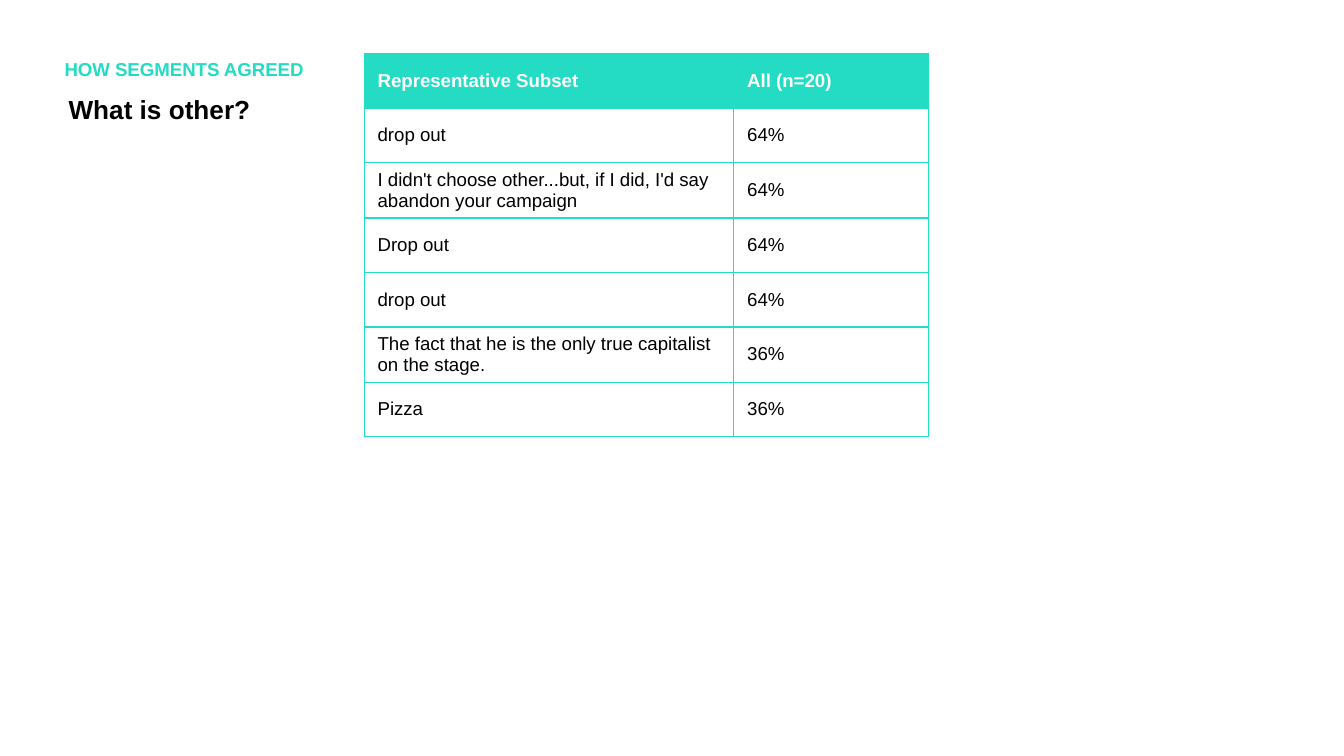
from lxml.etree import SubElement
from pptx import Presentation
from pptx.dml.color import RGBColor
from pptx.enum.text import MSO_ANCHOR, PP_ALIGN
from pptx.oxml.ns import qn
from pptx.util import Inches, Pt

TEAL = RGBColor(0x24, 0xDB, 0xC3)
BLACK = RGBColor(0, 0, 0)
WHITE = RGBColor(0xFF, 0xFF, 0xFF)

TITLE = ("HOW SEGMENTS AGREED", (0.38, 0.4, 2.32, 0.28), 10, TEAL)
BODY = ("What is other?", (0.41, 0.67, 2.3, 4.41), 14, BLACK)
ROWS = [
    ("Representative Subset", "All (n=20)"),
    ("drop out", "64%"),
    ("I didn't choose other...but, if I did, I'd say abandon your campaign", "64%"),
    ("Drop out", "64%"),
    ("drop out", "64%"),
    ("The fact that he is the only true capitalist on the stage.", "36%"),
    ("Pizza", "36%"),
]
COLS = (2.75, 1.45)
TOP, LEFT, HIGH = 0.4, 2.71, 2.84
WIDE = Inches(10)


def apply(obj, form):
    for key, val in form.items():
        setattr(obj, key, val)


def style(par, size, color, bold):
    font = par.runs[0].font
    apply(font, {"name": "Arial", "size": Pt(size), "bold": bold})
    font.color.rgb = color


def place(hold, text, box, size, color):
    apply(hold, dict(zip(("left", "top", "width", "height"), map(Inches, box))))
    frame = hold.text_frame
    frame.text = text
    apply(frame, {"word_wrap": True, "vertical_anchor": MSO_ANCHOR.TOP})
    par = frame.paragraphs[0]
    apply(par, {"alignment": PP_ALIGN.LEFT, "line_spacing": 0.9,
                "space_before": Pt(10)})
    style(par, size, color, True)
    props = par._p.get_or_add_pPr()
    props.set("marL", "0")
    props.set("indent", "0")
    SubElement(props, qn("a:buNone"))


def border(cell):
    props = cell._tc.get_or_add_tcPr()
    for side in ("lnL", "lnR", "lnT", "lnB"):
        line = SubElement(props, qn("a:" + side), w=str(Pt(0.75)))
        fill = SubElement(line, qn("a:solidFill"))
        SubElement(fill, qn("a:srgbClr"), val=str(TEAL))


deck = Presentation()
apply(deck, {"slide_width": WIDE, "slide_height": WIDE * 9 // 16})
slide = deck.slides.add_slide(deck.slide_layouts[1])
place(slide.placeholders[1], *BODY)
place(slide.shapes.title, *TITLE)

table = slide.shapes.add_table(
    len(ROWS), len(COLS), Inches(LEFT), Inches(TOP),
    Inches(sum(COLS)), Inches(HIGH)).table
for col, wide in zip(table.columns, COLS):
    col.width = Inches(wide)
for r, row in enumerate(ROWS):
    head = r == 0
    for c, text in enumerate(row):
        cell = table.cell(r, c)
        apply(cell, {"text": text, "vertical_anchor": MSO_ANCHOR.MIDDLE})
        border(cell)
        cell.fill.solid()
        cell.fill.fore_color.rgb = TEAL if head else WHITE
        style(cell.text_frame.paragraphs[0], 10, WHITE if head else BLACK, head)

deck.save("out.pptx")
